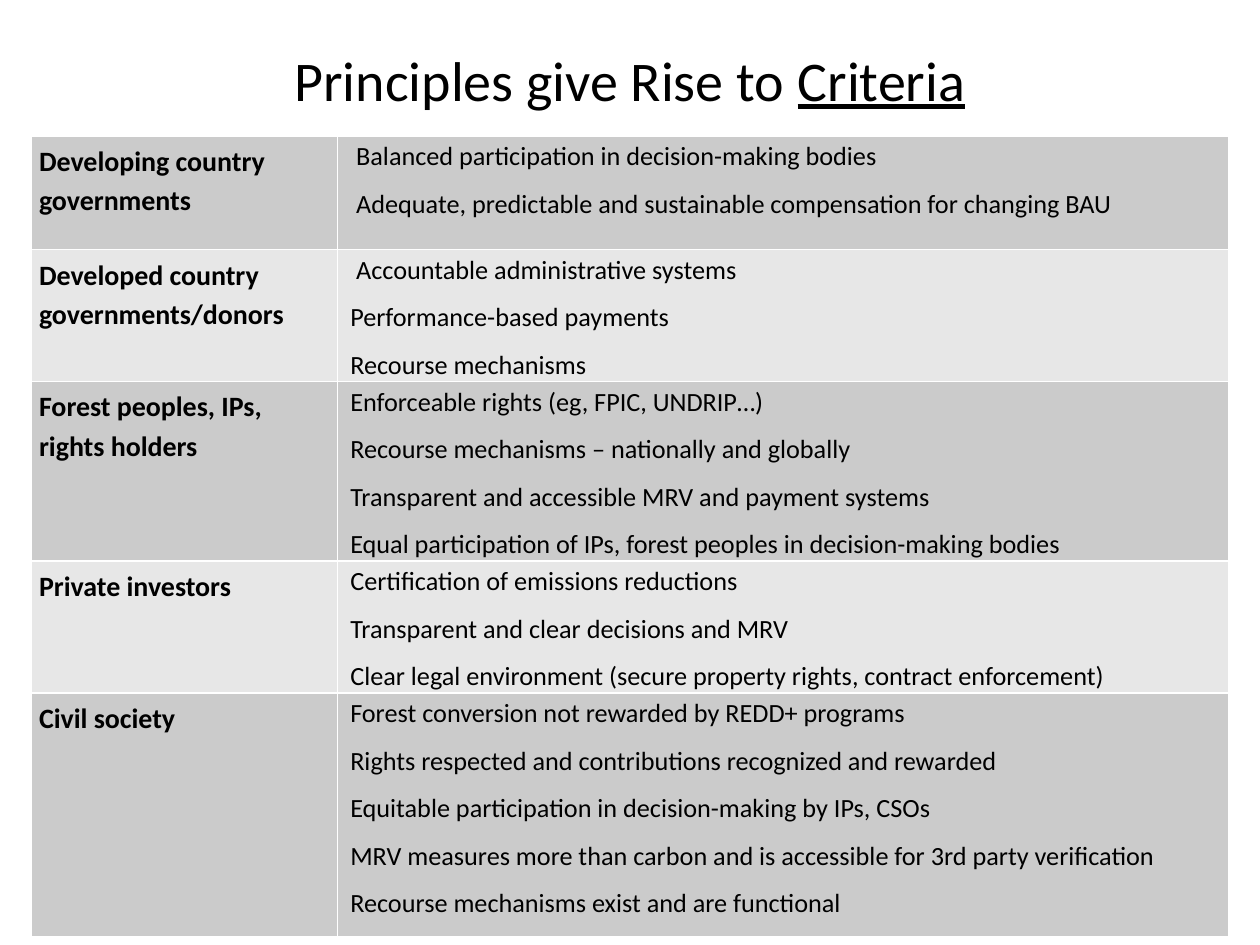
from pptx import Presentation
from pptx.dml.color import RGBColor
from pptx.enum.text import MSO_ANCHOR, PP_ALIGN
from pptx.util import Inches, Pt

TITLE = [("Principles give Rise to ", False), ("Criteria", True)]
CRITERIA = [
    ("Developing country governments", 0.9, [
        " Balanced participation in decision-making bodies",
        " Adequate, predictable and sustainable compensation for changing BAU",
    ]),
    ("Developed country governments/donors", 0.9, [
        " Accountable administrative systems",
        "Performance-based payments",
        "Recourse mechanisms",
    ]),
    ("Forest peoples, IPs, rights holders", 1.23, [
        "Enforceable rights (eg, FPIC, UNDRIP…)",
        "Recourse mechanisms – nationally and globally",
        "Transparent and accessible MRV and payment systems",
        "Equal participation of IPs, forest peoples in decision-making bodies",
    ]),
    ("Private investors", 0.9, [
        "Certification of emissions reductions",
        "Transparent and clear decisions and MRV",
        "Clear legal environment (secure property rights, contract enforcement)",
    ]),
    ("Civil society", 1.94, [
        "Forest conversion not rewarded by REDD+ programs",
        "Rights respected and contributions recognized and rewarded",
        "Equitable participation in decision-making by IPs, CSOs",
        "MRV measures more than carbon and is accessible for 3rd party verification",
        "Recourse mechanisms exist and are functional",
    ]),
]
COLUMN_WIDTHS = [2.43, 7.07]
BANDS = ["CBCBCB", "E7E7E7"]


def color(value):
    return RGBColor.from_string(value)


def style_font(font, size, bold=False):
    font.name = "Calibri"
    font.size = Pt(size)
    font.bold = bold
    font.color.rgb = color("000000")


def fill_cell(cell, lines, band, size, bold, space_after, indent, margins):
    cell.fill.solid()
    cell.fill.fore_color.rgb = color(band)
    cell.margin_left = cell.margin_right = Inches(margins[0])
    cell.margin_top = cell.margin_bottom = Inches(margins[1])
    cell.text_frame.text = "\n".join(lines)
    for para in cell.text_frame.paragraphs:
        para.line_spacing = 1.15
        para.space_after = Pt(space_after)
        para._p.get_or_add_pPr().set("marL", str(Inches(indent)))
        style_font(para.runs[0].font, size, bold)


def add_title(page):
    title = page.shapes.title
    title.left, title.top = Inches(0.5), 0
    title.width, title.height = Inches(9), Inches(1.25)
    title.text_frame.vertical_anchor = MSO_ANCHOR.MIDDLE
    para = title.text_frame.paragraphs[0]
    para.alignment = PP_ALIGN.CENTER
    for text, underlined in TITLE:
        span = para.add_run()
        span.text = text
        style_font(span.font, 32)
        span.font.underline = underlined


def add_criteria_table(page):
    heights = [height for _, height, _ in CRITERIA]
    table = page.shapes.add_table(
        len(CRITERIA), len(COLUMN_WIDTHS), Inches(0.25), Inches(1.08),
        Inches(sum(COLUMN_WIDTHS)), Inches(sum(heights))).table
    table.first_row = False
    table.horz_banding = False
    for column, width in zip(table.columns, COLUMN_WIDTHS):
        column.width = Inches(width)
    for index, (group, height, criteria) in enumerate(CRITERIA):
        table.rows[index].height = Inches(height)
        band = BANDS[index % len(BANDS)]
        fill_cell(table.cell(index, 0), [group], band, 16, True, 10, 0, (0.06, 0.03))
        fill_cell(table.cell(index, 1), criteria, band, 15, False, 6, 0.1, (0, 0))


def main():
    deck = Presentation()
    deck.slide_width, deck.slide_height = Inches(10), Inches(7.5)
    page = deck.slides.add_slide(deck.slide_layouts[5])
    add_title(page)
    add_criteria_table(page)
    deck.save("out.pptx")


if __name__ == "__main__":
    main()
